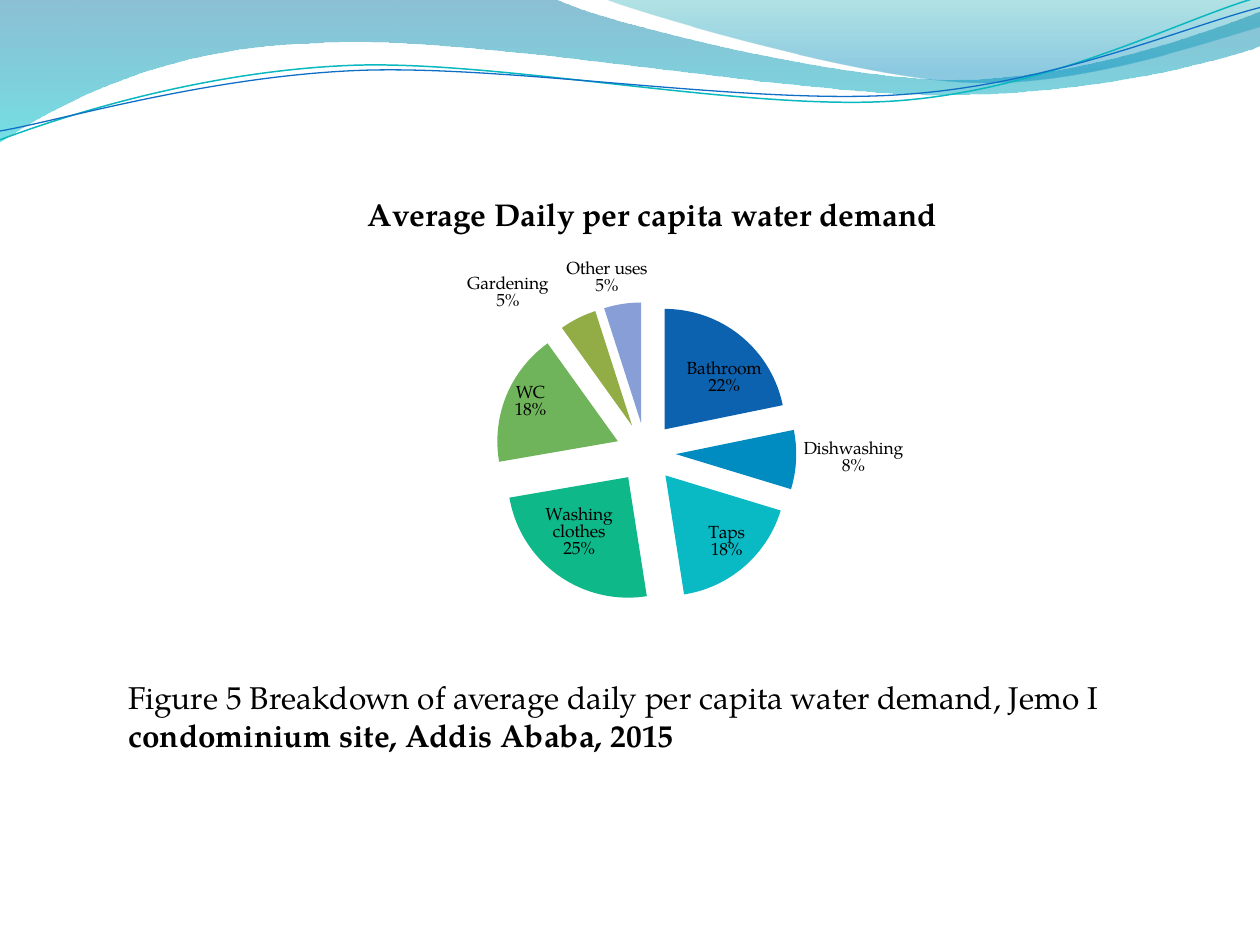
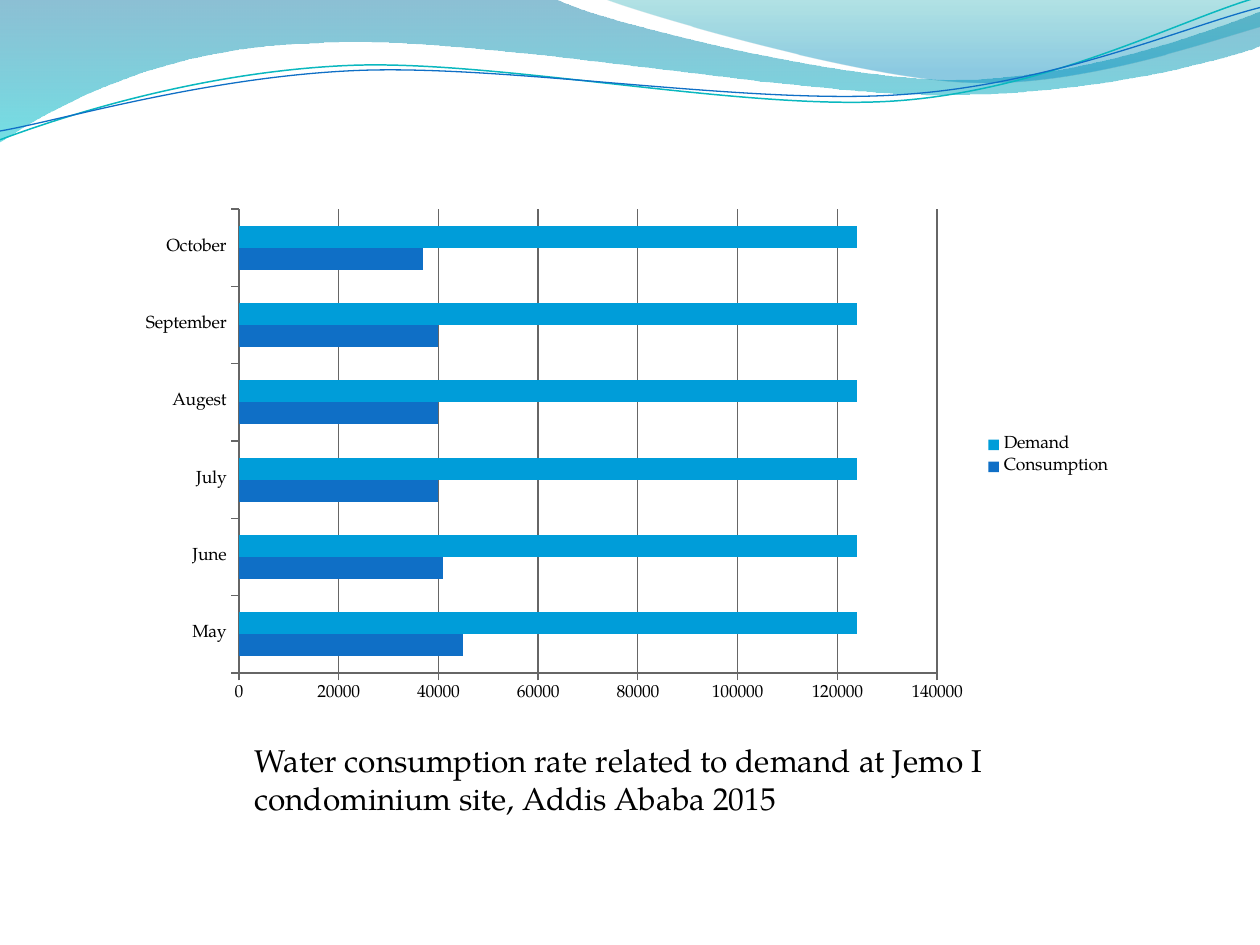
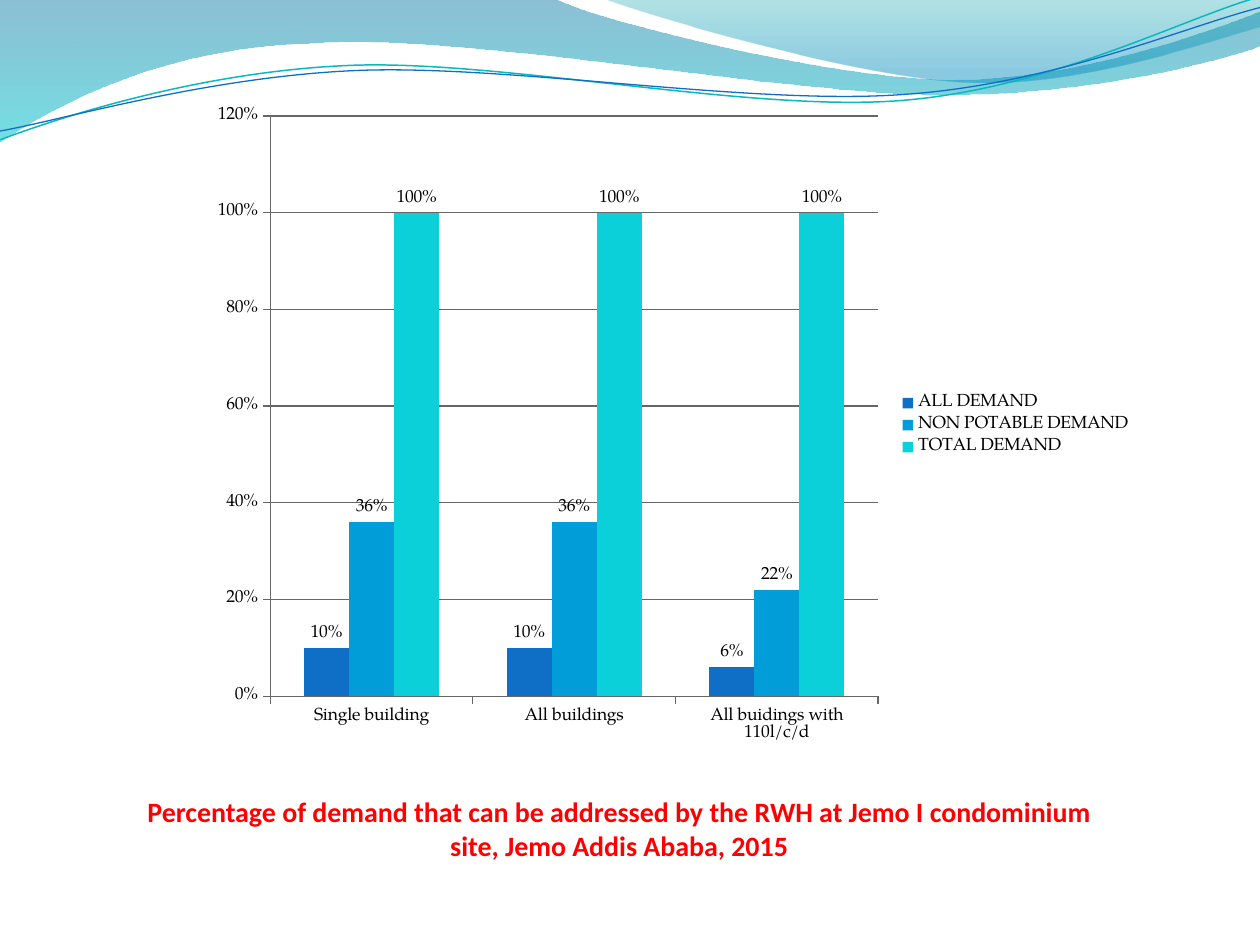
from dataclasses import dataclass

from lxml import etree
from pptx import Presentation
from pptx.chart.data import CategoryChartData
from pptx.dml.color import RGBColor
from pptx.enum.chart import XL_CHART_TYPE, XL_LABEL_POSITION, XL_LEGEND_POSITION, XL_TICK_MARK
from pptx.enum.text import MSO_ANCHOR, MSO_AUTO_SIZE, PP_ALIGN
from pptx.oxml.ns import qn
from pptx.util import Cm, Pt

PIE = XL_CHART_TYPE.PIE
BAR = XL_CHART_TYPE.BAR_CLUSTERED
COLUMN = XL_CHART_TYPE.COLUMN_CLUSTERED
BEST_FIT = XL_LABEL_POSITION.BEST_FIT
OUTSIDE_END = XL_LABEL_POSITION.OUTSIDE_END
RIGHT = XL_LEGEND_POSITION.RIGHT
TICK_OUT = XL_TICK_MARK.OUTSIDE
TOP, MIDDLE = MSO_ANCHOR.TOP, MSO_ANCHOR.MIDDLE
GROW = MSO_AUTO_SIZE.SHAPE_TO_FIT_TEXT
LEFT, CENTER = PP_ALIGN.LEFT, PP_ALIGN.CENTER


@dataclass(frozen=True)
class Theme:
    font: str = "TeX Gyre Pagella"
    alert_font: str = "Calibri"
    text: str = "000000"
    alert: str = "FF0000"
    axis: str = "666666"
    series: tuple = ("0F6FC6", "009DD9", "0BD0D9")
    slices: tuple = ("0D62AF", "008BC1", "09B9C3", "0EB889", "6FB45A", "92AC46", "879FD6")
    caption_size: int = 18
    alert_size: int = 16
    label_size: int = 10


THEME = Theme()

# Wave outlines in inches: a pair is a straight step, six numbers a Bézier curve.
# Gradient stops are (position, colour, opacity in percent).
WAVE_FILLS = [
    ([(0, 0), (4.4, -0.01), (4.76, 0.17, 6.64, 0.63, 7.58, 0.63),
      (8.53, 0.63, 9.58, 0.26, 10, 0.09), (10.01, 0.36),
      (9.83, 0.44, 8.7, 0.76, 7.46, 0.75), (6.22, 0.75, 3.82, 0.28, 2.57, 0.34),
      (1.29, 0.36, 0.46, 0.83, -0.01, 1.13), (0, 0)],
     [(0, "0074A1", 45), (1, "00C6CF", 55)]),
    ([(4.79, -0.01), (5.09, 0.11, 6.82, 0.62, 7.69, 0.65),
      (8.56, 0.69, 9.61, 0.32, 10, 0.21), (10, 0), (4.79, -0.01)],
     [(0, "00A1A9", 30), (0.8, "008BBF", 45)]),
]
WAVE_LINES = [
    ([(0, 1.11), (0.48, 0.93, 1.58, 0.57, 2.77, 0.52), (3.95, 0.47, 5.93, 0.89, 7.13, 0.8),
      (8.33, 0.71, 9.38, 0.15, 9.98, -0.02)], "0AB8BF", 0.85),
    ([(0, 1.04), (0.47, 0.96, 1.64, 0.61, 2.83, 0.56), (4.03, 0.51, 5.97, 0.84, 7.17, 0.75),
      (8.36, 0.67, 9.41, 0.21, 10, 0.06)], "0F6FC6", 0.75),
]


def rgb(value):
    return RGBColor.from_string(value)


def set_attrs(obj, **values):
    for name, value in values.items():
        setattr(obj, name, value)


def set_font(font, size, name=THEME.font, color=THEME.text, bold=False):
    set_attrs(font, name=name, size=Pt(size), bold=bold)
    font.color.rgb = rgb(color)


def add_outline(slide, steps, close):
    """Build the outline through all points, then bend each six-number step into a curve."""
    start, *rest = [(Cm(2.54 * x), Cm(2.54 * y))
                    for step in steps for x, y in zip(step[::2], step[1::2])]
    builder = slide.shapes.build_freeform(*start)
    builder.add_line_segments(rest, close=close)
    sp = builder.convert_to_shape()
    sp.shadow.inherit = False

    segments = iter(list(sp.element.iter(qn("a:lnTo"))))
    for step in steps[1:]:
        parts = [next(segments) for _ in range(len(step) // 2)]
        if len(parts) == 3:
            curve = etree.Element(qn("a:cubicBezTo"))
            parts[0].addprevious(curve)
            for part in parts:
                curve.append(part[0])
                part.getparent().remove(part)
    return sp


def add_wave_fill(slide, steps, stops):
    sp = add_outline(slide, steps, True)
    sp.line.fill.background()
    sp.fill.gradient()
    sp.fill.gradient_angle = 270
    for stop, (position, color, _) in zip(sp.fill.gradient_stops, stops):
        stop.position = position
        stop.color.rgb = rgb(color)
    for clr, (_, _, opacity) in zip(sp.element.iter(qn("a:srgbClr")), stops):
        etree.SubElement(clr, qn("a:alpha")).set("val", str(opacity * 1000))
    return sp


def add_wave_line(slide, steps, color, width):
    sp = add_outline(slide, steps, False)
    sp.fill.background()
    sp.line.color.rgb = rgb(color)
    sp.line.width = Pt(width)
    return sp


def put_waves_on_layout(slide):
    """Draw the waves once and hand them to the layout that all slides use."""
    layout = slide.slide_layout
    for ph in list(layout.placeholders):
        ph.element.getparent().remove(ph.element)
    waves = [add_wave_fill(slide, *wave) for wave in WAVE_FILLS]
    waves += [add_wave_line(slide, *wave) for wave in WAVE_LINES]
    for sp in waves:
        layout.shapes.element.append(sp.element)


def add_caption(slide, box, runs, align=LEFT, anchor=TOP, **font):
    """Add a caption from (text, bold) runs."""
    tf = slide.shapes.add_textbox(*map(Cm, box)).text_frame
    set_attrs(tf, word_wrap=True, auto_size=GROW, vertical_anchor=anchor)
    p = tf.paragraphs[0]
    p.alignment = align
    for text, bold in runs:
        r = p.add_run()
        r.text = text
        set_font(r.font, **{"size": THEME.caption_size, "bold": bold, **font})


def add_chart(slide, kind, box, categories, series):
    data = CategoryChartData()
    data.categories = categories
    for name, values in series.items():
        data.add_series(name, values)
    chart = slide.shapes.add_chart(kind, *map(Cm, box), data).chart
    set_font(chart.font, THEME.label_size)
    set_attrs(chart, has_title=False, has_legend=False)
    return chart


def add_pie(slide, box, title, shares, explosion):
    chart = add_chart(slide, PIE, box, list(shares), {title: list(shares.values())})
    chart.has_title = True
    tf = chart.chart_title.text_frame
    tf.text = title
    set_font(tf.paragraphs[0].runs[0].font, THEME.caption_size, bold=True)

    plot = chart.plots[0]
    plot.vary_by_categories = True
    ser = plot.series[0]
    explode = etree.Element(qn("c:explosion"), val=str(explosion))
    ser._element.find(qn("c:tx")).addnext(explode)
    for i, color in enumerate(THEME.slices):
        fill = ser.points[i].format.fill
        fill.solid()
        fill.fore_color.rgb = rgb(color)

    labels = ser.data_labels
    set_attrs(labels, show_value=False, show_percentage=True, show_category_name=True,
              position=BEST_FIT, number_format="0%", number_format_is_linked=False)
    set_font(labels.font, THEME.label_size)
    separator = etree.Element(qn("c:separator"))
    separator.text = "\n"
    labels._element.find(qn("c:showBubbleSize")).addnext(separator)
    for leader in labels._element.findall(qn("c:showLeaderLines")):
        leader.set("val", "0")


def add_bars(slide, kind, box, categories, series, top, step, fmt="General", labelled=False):
    chart = add_chart(slide, kind, box, categories, series)
    chart.has_legend = True
    set_attrs(chart.legend, position=RIGHT, include_in_layout=False)
    set_attrs(chart.value_axis, minimum_scale=0, maximum_scale=top, major_unit=step,
              has_major_gridlines=True)
    set_attrs(chart.value_axis.tick_labels, number_format=fmt, number_format_is_linked=False)
    chart.category_axis.has_major_gridlines = False
    for axis in (chart.category_axis, chart.value_axis):
        axis.major_tick_mark = TICK_OUT
    for part in (chart.category_axis, chart.value_axis, chart.value_axis.major_gridlines):
        part.format.line.color.rgb = rgb(THEME.axis)
        part.format.line.width = Pt(0.75)

    plot = chart.plots[0]
    set_attrs(plot, vary_by_categories=False, gap_width=150)
    for ser, color in zip(plot.series, THEME.series):
        ser.format.fill.solid()
        ser.format.fill.fore_color.rgb = rgb(color)
        if labelled:
            set_attrs(ser.data_labels, show_value=True, position=OUTSIDE_END,
                      number_format=fmt, number_format_is_linked=False)
            set_font(ser.data_labels.font, THEME.label_size)


def main():
    prs = Presentation()
    set_attrs(prs, slide_width=Cm(25.4), slide_height=Cm(19.05))
    breakdown, consumption, coverage = (
        prs.slides.add_slide(prs.slide_layouts[6]) for _ in range(3))
    put_waves_on_layout(breakdown)

    add_pie(breakdown, (4.11, 3.61, 18.08, 9.4), "Average Daily per capita water demand",
            {"Bathroom": 22, "Dishwashing": 8, "Taps": 18, "Washing clothes": 25,
             "WC": 18, "Gardening": 5, "Other uses": 5}, explosion=25)
    add_caption(breakdown, (2.34, 13.54, 21.16, 1.8), [
        ("Figure 5 Breakdown of average daily per capita water demand, Jemo I ", False),
        ("condominium site, Addis Ababa, 2015", True)])

    add_bars(consumption, BAR, (2.54, 4.01, 20.12, 10.36),
             ["May", "June", "July", "Augest", "September", "October"],
             {"Consumption": [45000, 41000, 40000, 40000, 40000, 37000],
              "Demand": [124000] * 6}, top=140000, step=20000)
    add_caption(consumption, (4.88, 14.81, 19.25, 1.8), [
        ("Water consumption rate related to demand at Jemo I condominium site, "
         "Addis Ababa 2015", False)])

    add_bars(coverage, COLUMN, (4.01, 1.9, 19.05, 13.34),
             ["Single building", "All buildings", "All buidings with 110l/c/d"],
             {"ALL DEMAND": [0.1, 0.1, 0.06],
              "NON POTABLE DEMAND": [0.36, 0.36, 0.22],
              "TOTAL DEMAND": [1, 1, 1]}, top=1.2, step=0.2, fmt="0%", labelled=True)
    add_caption(coverage, (2.54, 15.88, 19.89, 1.63), [
        ("Percentage of demand that can be addressed by the RWH at Jemo I condominium site, "
         "Jemo Addis Ababa, 2015", True)],
        align=CENTER, anchor=MIDDLE, name=THEME.alert_font, size=THEME.alert_size,
        color=THEME.alert)

    prs.save("out.pptx")


if __name__ == "__main__":
    main()
